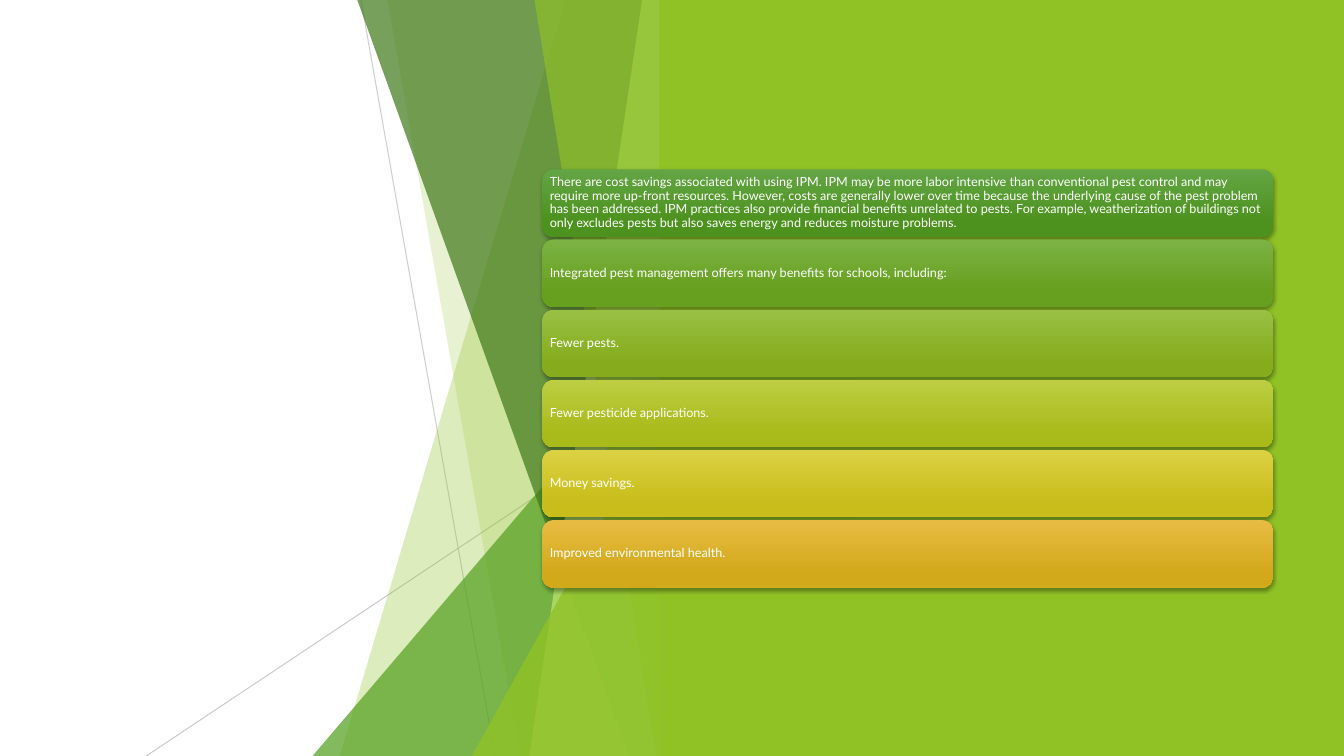
import pptx
import pptx.dml.color
import pptx.enum.shapes
import pptx.enum.text
import pptx.oxml
import pptx.oxml.ns
import pptx.util
from pptx.util import Inches

RGB = pptx.dml.color.RGBColor
SHAPE = pptx.enum.shapes.MSO_SHAPE
WHITE = RGB(0xFF, 0xFF, 0xFF)
LIME = RGB(0x90, 0xC2, 0x26)
GREEN = RGB(0x54, 0xA0, 0x21)
FOREST = RGB(0x3F, 0x78, 0x19)
PALE_LIME = RGB(0xC0, 0xE4, 0x74)
GREY = RGB(0xBF, 0xBF, 0xBF)

BENEFITS = [
    ("There are cost savings associated with using IPM. IPM may be more labor intensive than "
     "conventional pest control and may require more up-front resources. However, costs are "
     "generally lower over time because the underlying cause of the pest problem has been "
     "addressed. IPM practices also provide financial benefits unrelated to pests. For example, "
     "weatherization of buildings not only excludes pests but also saves energy and reduces "
     "moisture problems.", RGB(0x63, 0xA5, 0x45), RGB(0x4D, 0x92, 0x1E)),
    ("Integrated pest management offers many benefits for schools, including:",
     RGB(0x7B, 0xB2, 0x44), RGB(0x67, 0x9F, 0x1E)),
    ("Fewer pests.", RGB(0x99, 0xC0, 0x44), RGB(0x86, 0xAC, 0x1D)),
    ("Fewer pesticide applications.", RGB(0xBD, 0xCE, 0x43), RGB(0xA9, 0xBA, 0x1B)),
    ("Money savings.", RGB(0xDC, 0xD1, 0x43), RGB(0xC8, 0xBD, 0x1A)),
    ("Improved environmental health.", RGB(0xE7, 0xBC, 0x43), RGB(0xD2, 0xA9, 0x1B)),
]

FRAME_FORMAT = {
    "word_wrap": True,
    "vertical_anchor": pptx.enum.text.MSO_ANCHOR.MIDDLE,
    "margin_left": Inches(0.04),
    "margin_top": Inches(0.04),
    "margin_right": Inches(0.04),
    "margin_bottom": Inches(0.04),
}
PARAGRAPH_FORMAT = {"alignment": pptx.enum.text.PP_ALIGN.LEFT, "line_spacing": 0.9}
FONT_FORMAT = {"name": "Lato", "size": pptx.util.Pt(9)}

FACETS = [
    (1.05, 3.29, LIME, 30),
    (2.82, 1.5, LIME, 20),
    (3.56, 4.17, GREEN, 72),
    (3.12, 0.42, FOREST, 70),
    (0.29, 1.41, PALE_LIME, 70),
    (1.36, 0.15, LIME, 65),
    (1.98, 3.57, LIME, 80),
]
TRIANGLES = (2, 6)


def apply_format(target, values):
    """Set every attribute named in values on target."""
    for name, value in values.items():
        setattr(target, name, value)


def append_xml(parent, xml):
    """Append a DrawingML fragment to parent."""
    parent.append(pptx.oxml.parse_xml(xml.replace(">", f" {pptx.oxml.ns.nsdecls('a')}>", 1)))


def set_opacity(shape, percent):
    """Make the solid colours of a shape partly transparent."""
    for color in shape._element.spPr.iter(pptx.oxml.ns.qn("a:srgbClr")):
        append_xml(color, f'<a:alpha val="{percent * 1000}"></a:alpha>')


def paint(shape, color):
    """Give a shape a plain fill with no outline or shadow."""
    shape.fill.solid()
    shape.fill.fore_color.rgb = color
    shape.line.fill.background()
    shape.shadow.inherit = False


def add_rays(slide, left, top, width, height):
    """Draw the two thin lines that cross behind the facets."""
    rays = [(2.13, 0, 3.46, height, 75), (width, 4.03, 0, height, 80)]
    for x1, y1, x2, y2, opacity in rays:
        ray = slide.shapes.add_connector(
            pptx.enum.shapes.MSO_CONNECTOR.STRAIGHT,
            Inches(left + x1), Inches(top + y1), Inches(left + x2), Inches(top + y2))
        ray.line.color.rgb = GREY
        ray.line.width = pptx.util.Pt(0.75)
        set_opacity(ray, opacity)
        append_xml(ray._element.spPr, "<a:effectLst></a:effectLst>")


def add_facets(slide, left, top, width, height):
    """Draw the translucent facets against the right side of the box."""
    right, bottom = left + width, top + height
    for index, (first, second, color, opacity) in enumerate(FACETS):
        if index in TRIANGLES:
            facet = slide.shapes.add_shape(
                SHAPE.ISOSCELES_TRIANGLE, Inches(right - first), Inches(bottom - second),
                Inches(first), Inches(second))
            facet.adjustments[0] = 1
        else:
            corners = [(right, top), (right, bottom), (right - second, bottom)]
            outline = slide.shapes.build_freeform(Inches(right - first), Inches(top))
            outline.add_line_segments([(Inches(x), Inches(y)) for x, y in corners])
            facet = outline.convert_to_shape()
        paint(facet, color)
        set_opacity(facet, opacity)


def add_panel(slide, left, top, width, height):
    """Fill the right side of the slide with lime."""
    panel = slide.shapes.add_shape(
        SHAPE.RECTANGLE, Inches(left), Inches(top), Inches(width), Inches(height))
    paint(panel, LIME)


def add_benefits(slide, left, top, width, height):
    """Stack the benefit cards evenly down the box."""
    card_height = 0.67
    pitch = (height - card_height) / (len(BENEFITS) - 1)
    for index, (wording, light, dark) in enumerate(BENEFITS):
        card = slide.shapes.add_shape(
            SHAPE.ROUNDED_RECTANGLE, Inches(left), Inches(top + index * pitch),
            Inches(width), Inches(card_height))
        card.fill.gradient()
        card.fill.gradient_angle = 270
        for stop, position, color in zip(card.fill.gradient_stops, (0, 0.78), (light, dark)):
            stop.position = position
            stop.color.rgb = color
        card.line.fill.background()
        card.shadow.inherit = False
        effects = card._element.spPr.find(pptx.oxml.ns.qn("a:effectLst"))
        append_xml(effects, '<a:outerShdw blurRad="38100" dist="25400" dir="5400000" rotWithShape="0">'
                            '<a:srgbClr val="000000"><a:alpha val="35000"/></a:srgbClr></a:outerShdw>')
        frame = card.text_frame
        frame.text = wording
        paragraph = frame.paragraphs[0]
        apply_format(frame, FRAME_FORMAT)
        apply_format(paragraph, PARAGRAPH_FORMAT)
        apply_format(paragraph.runs[0].font, FONT_FORMAT)
        paragraph.runs[0].font.color.rgb = WHITE


def main():
    """Build and save the slide."""
    deck = pptx.Presentation()
    deck.slide_width, deck.slide_height = Inches(13.33), Inches(7.5)
    slide = deck.slides.add_slide(deck.slide_layouts[6])
    add_rays(slide, 1.45, 0, 5.21, 7.5)
    add_facets(slide, 3.1, -0.01, 3.56, 7.51)
    add_panel(slide, 6.54, 0, 6.8, 7.5)
    add_benefits(slide, 5.38, 1.68, 7.25, 4.15)
    deck.save("out.pptx")


if __name__ == "__main__":
    main()
